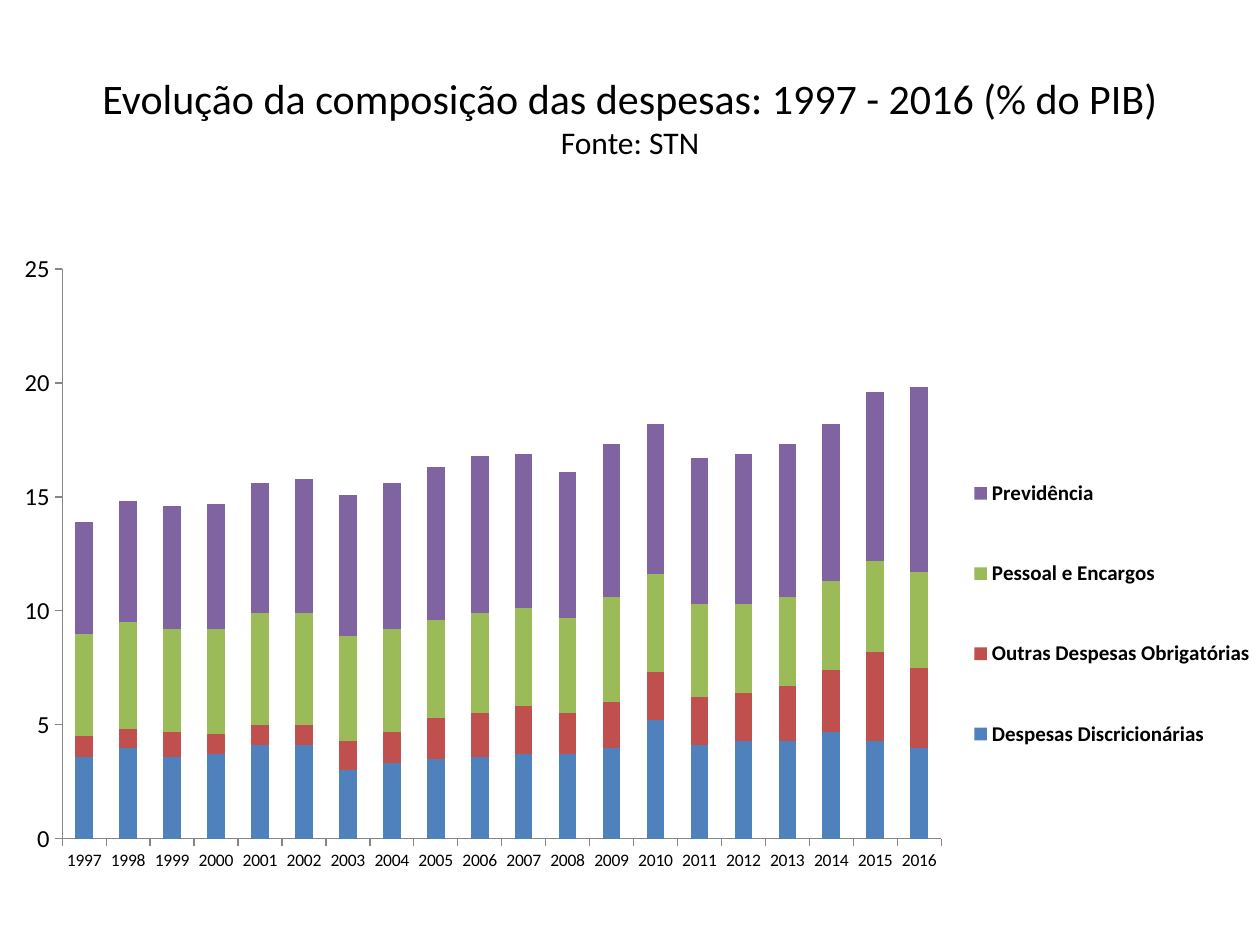
from lxml.etree import SubElement
from pptx import Presentation
from pptx.chart.data import CategoryChartData
from pptx.dml.color import RGBColor
from pptx.enum.chart import XL_CHART_TYPE, XL_LEGEND_POSITION, XL_TICK_MARK
from pptx.enum.text import MSO_ANCHOR, PP_ALIGN
from pptx.oxml.ns import qn
from pptx.util import Cm, Pt

FONT = "Calibri"
COLOURS = {
    "text": "000000",
    "axis": "868686",
    "Despesas Discricionárias": "4F81BD",
    "Outras Despesas Obrigatórias": "C0504D",
    "Pessoal e Encargos": "9BBB59",
    "Previdência": "8064A2",
}
YEARS = [str(year) for year in range(1997, 2017)]
EXPENSES = {
    "Despesas Discricionárias": [
        3.6, 4, 3.6, 3.7, 4.1, 4.1, 3, 3.3, 3.5, 3.6,
        3.7, 3.7, 4, 5.2, 4.1, 4.3, 4.3, 4.7, 4.3, 4],
    "Outras Despesas Obrigatórias": [
        0.9, 0.8, 1.1, 0.9, 0.9, 0.9, 1.3, 1.4, 1.8, 1.9,
        2.1, 1.8, 2, 2.1, 2.1, 2.1, 2.4, 2.7, 3.9, 3.5],
    "Pessoal e Encargos": [
        4.5, 4.7, 4.5, 4.6, 4.9, 4.9, 4.6, 4.5, 4.3, 4.4,
        4.3, 4.2, 4.6, 4.3, 4.1, 3.9, 3.9, 3.9, 4, 4.2],
    "Previdência": [
        4.9, 5.3, 5.4, 5.5, 5.7, 5.9, 6.2, 6.4, 6.7, 6.9,
        6.8, 6.4, 6.7, 6.6, 6.4, 6.6, 6.7, 6.9, 7.4, 8.1],
}


def colour(name):
    return RGBColor.from_string(COLOURS[name])


def style_font(font, size, bold=False):
    font.name = FONT
    font.size = Pt(size)
    font.bold = bold
    font.color.rgb = colour("text")


def add_span(para, text, size):
    span = para.add_run()
    span.text = text
    style_font(span.font, size)


def fill_title(page):
    title = page.shapes.title
    title.left, title.top, title.width, title.height = Cm(1.27), Cm(0.76), Cm(22.86), Cm(3.18)
    title.text_frame.vertical_anchor = MSO_ANCHOR.MIDDLE
    para = title.text_frame.paragraphs[0]
    para.alignment = PP_ALIGN.CENTER
    add_span(para, "Evolução da composição das despesas: 1997 - 2016 (% do PIB)", 24)
    para.add_line_break()
    add_span(para, "Fonte: STN", 18)


def set_layout(parent, index, x, y, w, h, inner=False):
    """Place a chart part by fractions of the chart's size."""
    for old in parent.findall(qn("c:layout")):
        parent.remove(old)
    layout = SubElement(parent, qn("c:layout"))
    parent.insert(index, layout)
    manual = SubElement(layout, qn("c:manualLayout"))
    settings = [("layoutTarget", "inner")] if inner else []
    settings += [("xMode", "edge"), ("yMode", "edge"), ("x", x), ("y", y), ("w", w), ("h", h)]
    for tag, value in settings:
        SubElement(manual, qn(f"c:{tag}")).set("val", str(value))


def style_axis(axis, size):
    axis.has_major_gridlines = False
    axis.major_tick_mark = XL_TICK_MARK.OUTSIDE
    axis.minor_tick_mark = XL_TICK_MARK.NONE
    axis.format.line.color.rgb = colour("axis")
    axis.format.line.width = Pt(0.75)
    style_font(axis.tick_labels.font, size)


def style_legend(chart):
    chart.has_legend = True
    legend = chart.legend
    legend.position = XL_LEGEND_POSITION.RIGHT
    legend.include_in_layout = False
    style_font(legend.font, 12, bold=True)
    set_layout(legend._element, 1, 0.77, 0.28, 0.23, 0.55)


def add_expense_chart(page):
    data = CategoryChartData()
    data.categories = YEARS
    for name, values in EXPENSES.items():
        data.add_series(name, values)
    chart = page.shapes.add_chart(
        XL_CHART_TYPE.COLUMN_STACKED, Cm(0.3), Cm(4.72), Cm(25.1), Cm(13.79), data).chart
    chart.has_title = False
    style_font(chart.font, 10)

    plot = chart.plots[0]
    plot.vary_by_categories = False
    plot.gap_width = 150
    plot.overlap = 100
    for series in plot.series:
        series.format.fill.solid()
        series.format.fill.fore_color.rgb = colour(series.name)

    style_axis(chart.category_axis, 10)
    style_axis(chart.value_axis, 14)
    chart.value_axis.minimum_scale = 0
    chart.value_axis.maximum_scale = 25
    chart.value_axis.major_unit = 5
    style_legend(chart)
    plot_area = chart._chartSpace.chart.plotArea
    set_layout(plot_area, 0, 0.038, 0.051, 0.706, 0.833, inner=True)


def main():
    deck = Presentation()
    deck.slide_width, deck.slide_height = Cm(25.4), Cm(19.05)
    page = deck.slides.add_slide(deck.slide_layouts[5])
    fill_title(page)
    add_expense_chart(page)
    deck.save("out.pptx")


if __name__ == "__main__":
    main()
